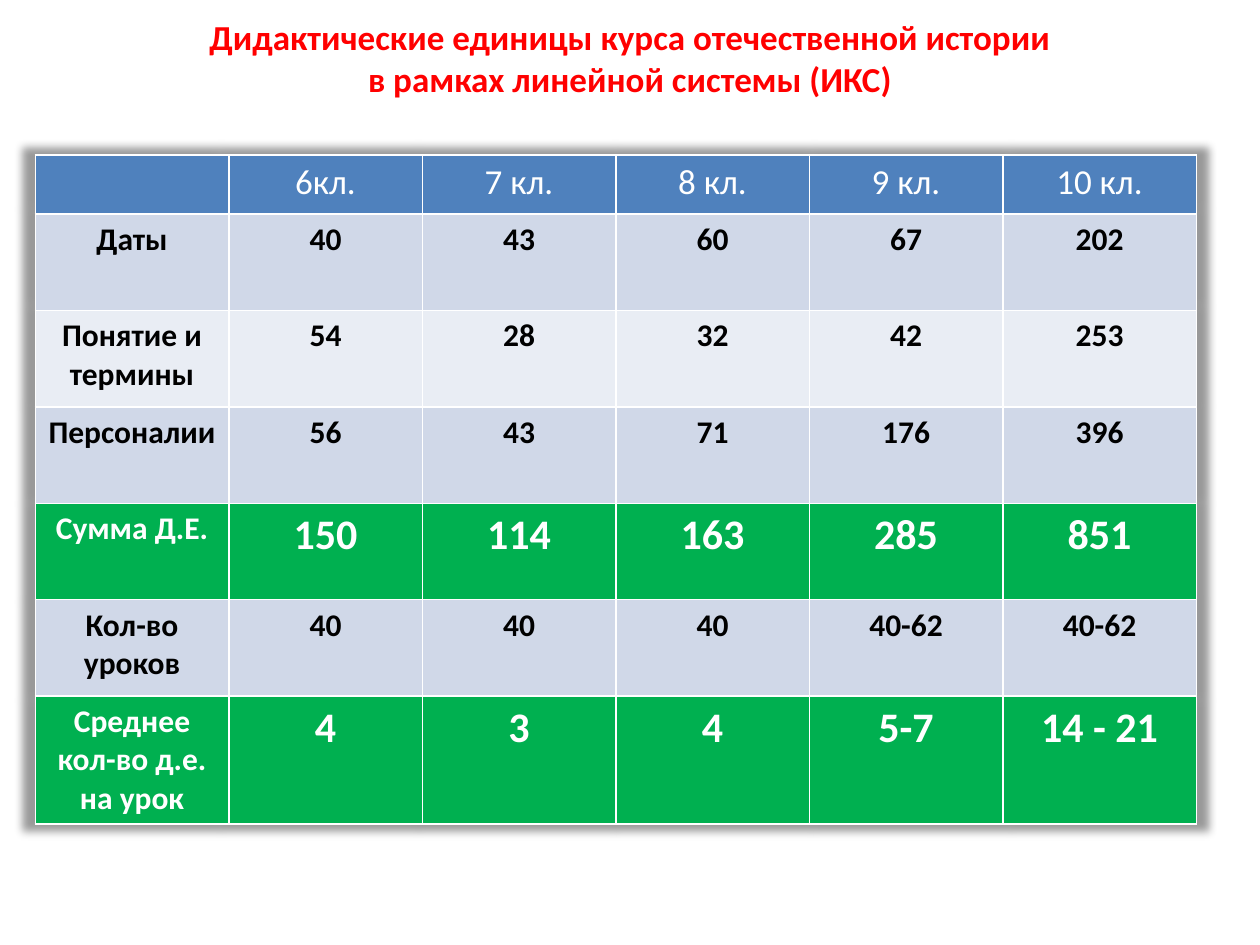
from lxml.etree import SubElement
from pptx import Presentation
from pptx.dml.color import RGBColor
from pptx.enum.text import MSO_ANCHOR, PP_ALIGN
from pptx.oxml.ns import qn
from pptx.util import Inches, Pt

TITLE = "Дидактические единицы курса отечественной истории\nв рамках линейной системы (ИКС)"
HEADER = ["", "6кл.", "7 кл.", "8 кл.", "9 кл.", "10 кл."]
ROWS = [
    ["Даты", "40", "43", "60", "67", "202"],
    ["Понятие и термины", "54", "28", "32", "42", "253"],
    ["Персоналии", "56", "43", "71", "176", "396"],
    ["Сумма Д.Е.", "150", "114", "163", "285", "851"],
    ["Кол-во уроков", "40", "40", "40", "40-62", "40-62"],
    ["Среднее кол-во д.е. на урок", "4", "3", "4", "5-7", "14 - 21"],
]
TOTAL_ROWS = {"Сумма Д.Е.", "Среднее кол-во д.е. на урок"}

FONT = "Calibri"
RED, WHITE, BLACK = "FF0000", "FFFFFF", "000000"
HEADER_BLUE, TOTAL_GREEN = "4F81BD", "00B050"
BANDS = ["D0D8E8", "E9EDF4"]
TABLE_LEFT, TABLE_TOP = 0.28, 1.23
COLUMN_WIDTH, HEADER_HEIGHT, ROW_HEIGHT = 1.536, 0.47, 0.765


def color(hex_value):
    return RGBColor.from_string(hex_value)


def write_text(text_frame, text, size=18, hex_color=BLACK, bold=True):
    paragraph = text_frame.paragraphs[0]
    paragraph.text = text
    paragraph.alignment = PP_ALIGN.CENTER
    for run in paragraph.runs:
        run.font.name = FONT
        run.font.size = Pt(size)
        run.font.bold = bold
        run.font.color.rgb = color(hex_color)


def fill_cell(cell, text, fill, **text_format):
    cell.fill.solid()
    cell.fill.fore_color.rgb = color(fill)
    write_text(cell.text_frame, text, **text_format)


def add_table_shadow(table):
    """Put a soft shadow, slightly larger than the table, behind it."""
    properties = table._tbl.tblPr
    effects = SubElement(properties, qn("a:effectLst"))
    shadow = SubElement(effects, qn("a:outerShdw"), blurRad="63500", sx="102000",
                        sy="102000", algn="ctr", rotWithShape="0")
    black = SubElement(shadow, qn("a:srgbClr"), val=BLACK)
    SubElement(black, qn("a:alpha"), val="40000")
    properties.insert(0, effects)


def add_title(slide):
    title = slide.shapes.title
    title.left, title.top = Inches(0), Inches(0)
    title.width, title.height = Inches(10), Inches(0.92)
    title.text_frame.vertical_anchor = MSO_ANCHOR.MIDDLE
    write_text(title.text_frame, TITLE, size=20, hex_color=RED)


def add_units_table(slide):
    height = HEADER_HEIGHT + ROW_HEIGHT * len(ROWS)
    table = slide.shapes.add_table(
        len(ROWS) + 1, len(HEADER), Inches(TABLE_LEFT), Inches(TABLE_TOP),
        Inches(COLUMN_WIDTH * len(HEADER)), Inches(height)).table
    for column in table.columns:
        column.width = Inches(COLUMN_WIDTH)
    for row in table.rows:
        row.height = Inches(ROW_HEIGHT)
    table.rows[0].height = Inches(HEADER_HEIGHT)

    for column_index, text in enumerate(HEADER):
        fill_cell(table.cell(0, column_index), text, HEADER_BLUE,
                  size=20, hex_color=WHITE, bold=False)
    for row_index, values in enumerate(ROWS):
        is_total = values[0] in TOTAL_ROWS
        fill = TOTAL_GREEN if is_total else BANDS[row_index % 2]
        for column_index, text in enumerate(values):
            fill_cell(table.cell(row_index + 1, column_index), text, fill,
                      size=24 if is_total and column_index else 18,
                      hex_color=WHITE if is_total else BLACK)
    add_table_shadow(table)


def main():
    presentation = Presentation()
    presentation.slide_width, presentation.slide_height = Inches(10), Inches(7.5)
    slide = presentation.slides.add_slide(presentation.slide_layouts[5])
    add_title(slide)
    add_units_table(slide)
    presentation.save("out.pptx")


if __name__ == "__main__":
    main()
